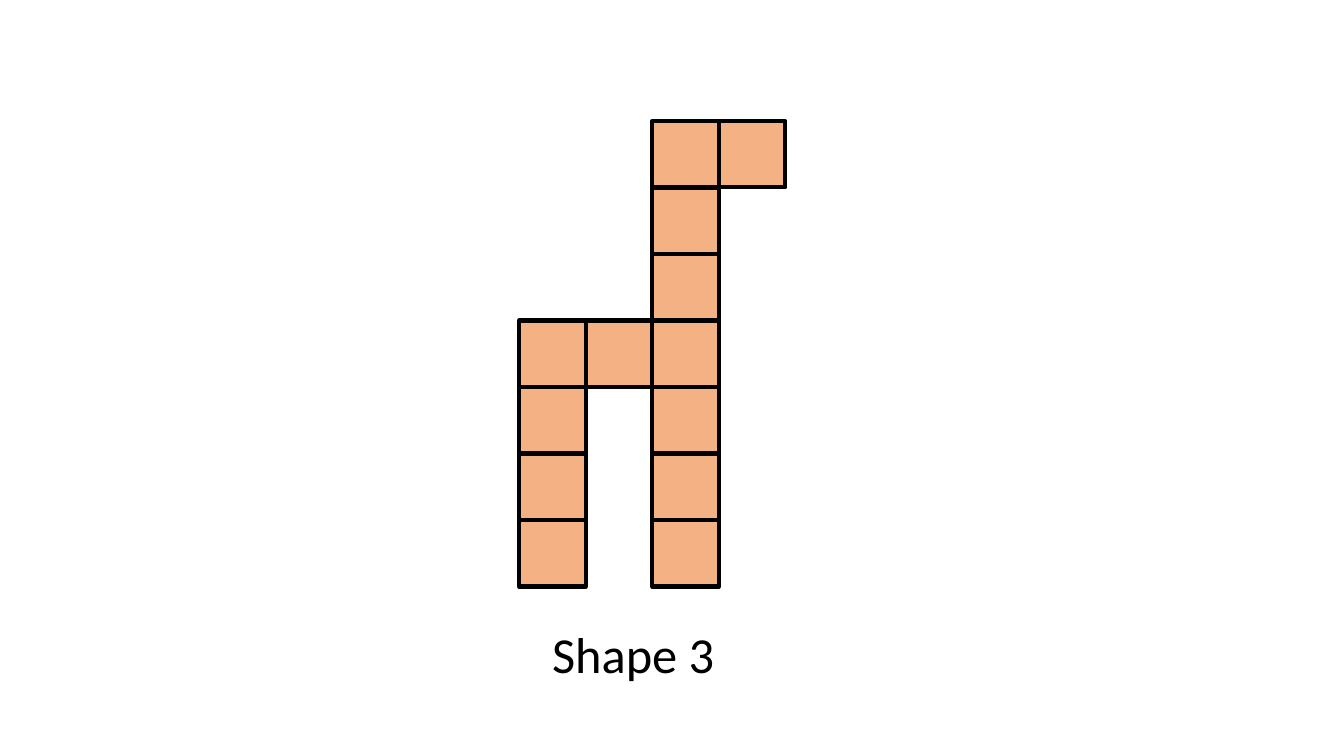
"""Build a slide with a figure made of equal squares and its label."""
import pptx
import pptx.util
import pptx.dml.color
import pptx.enum.shapes
import pptx.enum.text

Inches = pptx.util.Inches
Pt = pptx.util.Pt
RGBColor = pptx.dml.color.RGBColor

ORANGE = RGBColor(0xF4, 0xB1, 0x83)
BLACK = RGBColor(0, 0, 0)
SIDE = 0.66
LEFT, TOP = 5.15, 1.2
ROWS = ["..##", "..#.", "..#.", "###.", "#.#.", "#.#.", "#.#."]


def add_square(group, row, col):
    """Add one outlined square at a grid cell."""
    square = group.shapes.add_shape(
        pptx.enum.shapes.MSO_SHAPE.RECTANGLE,
        Inches(LEFT + col * SIDE), Inches(TOP + row * SIDE),
        Inches(SIDE), Inches(SIDE))
    square.shadow.inherit = False
    square.fill.solid()
    square.fill.fore_color.rgb = ORANGE
    square.line.color.rgb = BLACK
    square.line.width = Pt(3)


def add_figure(slide):
    """Add the grouped squares marked in the row patterns."""
    group = slide.shapes.add_group_shape()
    for row, cells in enumerate(ROWS):
        for col, cell in enumerate(cells):
            if cell == "#":
                add_square(group, row, col)


def add_label(slide, text):
    """Add the centred label under the figure."""
    box = slide.shapes.add_textbox(
        Inches(4.48), Inches(6.13), Inches(3.6), Inches(0.71))
    frame = box.text_frame
    frame.word_wrap = True
    frame.auto_size = pptx.enum.text.MSO_AUTO_SIZE.SHAPE_TO_FIT_TEXT
    frame.text = text
    line = frame.paragraphs[0]
    line.alignment = pptx.enum.text.PP_ALIGN.CENTER
    font = line.runs[0].font
    font.name = "Calibri"
    font.size = Pt(36)
    font.color.rgb = BLACK


def main():
    """Build and save the slide."""
    deck = pptx.Presentation()
    deck.slide_width = Inches(13.33)
    deck.slide_height = Inches(7.5)
    slide = deck.slides.add_slide(deck.slide_layouts[6])
    add_figure(slide)
    add_label(slide, "Shape 3")
    deck.save("out.pptx")


if __name__ == "__main__":
    main()
